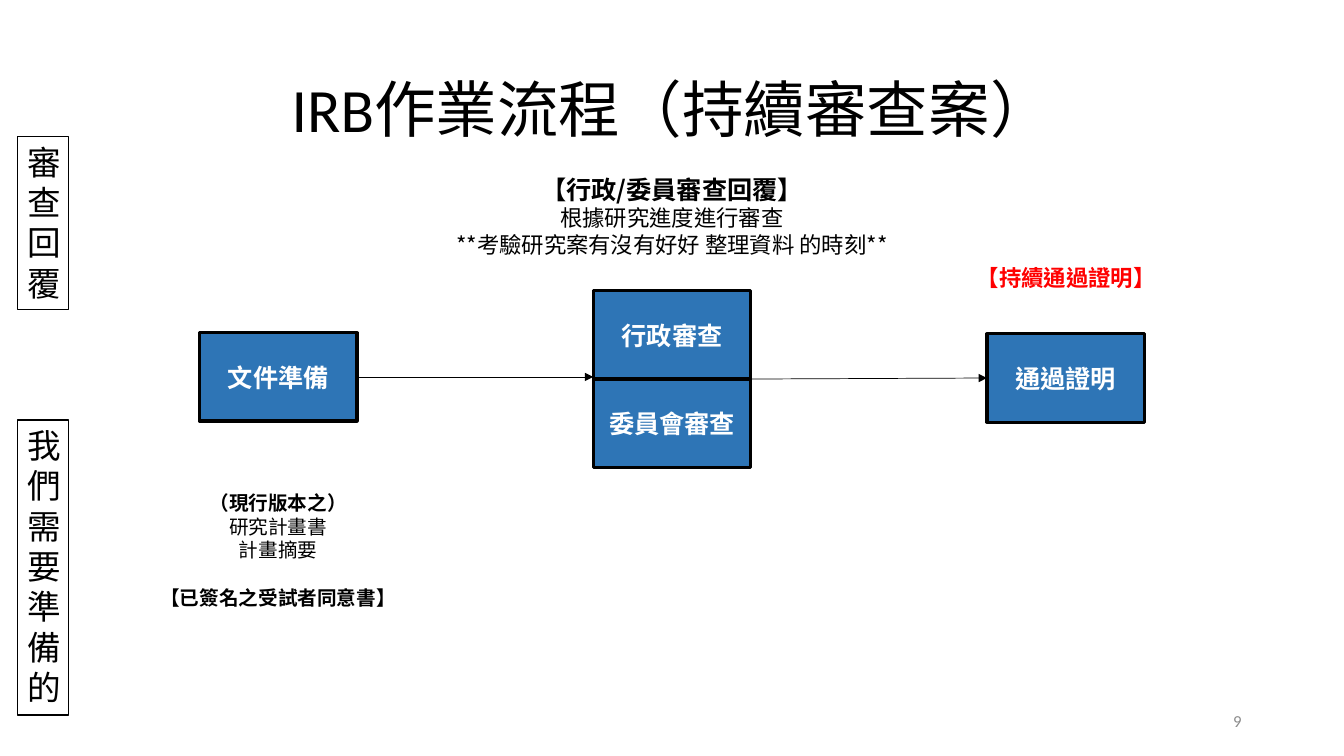
from lxml.etree import SubElement
from pptx import Presentation
from pptx.dml.color import RGBColor
from pptx.enum.shapes import MSO_CONNECTOR as Connector, MSO_SHAPE as Shape
from pptx.enum.text import MSO_ANCHOR as Anchor, MSO_AUTO_SIZE as AutoSize, PP_ALIGN as Align
from pptx.oxml.ns import qn
from pptx.util import Pt

PX = 9525  # EMU in one px, 96 px to the inch
COLORS = {"black": "000000", "white": "FFFFFF", "blue": "2E75B6",
          "red": "FF0000", "gray": "8C8C8C"}
CJK_FONT, LATIN_FONT = "Noto Sans CJK SC", "Calibri"


def color(name):
    return RGBColor.from_string(COLORS[name])


def set_all(target, values):
    for name, value in values.items():
        setattr(target, name, value)


class FlowSlide:
    """Holds the text style and the slide being built."""

    def __init__(self, presentation):
        self.slide = presentation.slides.add_slide(presentation.slide_layouts[5])
        self.shapes = self.slide.shapes

    def fill_text(self, shape, lines, align=Align.CENTER, anchor=Anchor.TOP,
                  font=CJK_FONT, spacing=None):
        """Each line is (text, size, bold, color, space before)."""
        frame = shape.text_frame
        set_all(frame, {"word_wrap": True, "auto_size": AutoSize.NONE,
                        "vertical_anchor": anchor})
        for index, (text, size, bold, tint, before) in enumerate(lines):
            paragraph = frame.add_paragraph() if index else frame.paragraphs[0]
            set_all(paragraph, {"alignment": align, "space_before": Pt(before),
                                "line_spacing": spacing or Pt(size * 1.2)})
            run = paragraph.add_run()
            run.text = text
            set_all(run.font, {"name": font, "size": Pt(size), "bold": bold})
            run.font.color.rgb = color(tint)
            properties = run._r.get_or_add_rPr()
            properties.set("lang", "zh-TW")
            SubElement(properties, qn("a:ea"), typeface=CJK_FONT)

    def title(self, text, left, top, width, height):
        shape = self.shapes.title
        set_all(shape, {"left": left * PX, "top": top * PX,
                        "width": width * PX, "height": height * PX})
        self.fill_text(shape, [(text, 44, False, "black", 0)], anchor=Anchor.MIDDLE,
                       font=LATIN_FONT, spacing=0.9)

    def text(self, lines, left, top, width, height, **style):
        box = self.shapes.add_textbox(left * PX, top * PX, width * PX, height * PX)
        self.fill_text(box, lines, **style)

    def box(self, lines, left, top, width, height, fill=None, line=0.75, **style):
        shape = self.shapes.add_shape(Shape.RECTANGLE, left * PX, top * PX,
                                      width * PX, height * PX)
        shape.shadow.inherit = False
        if fill:
            shape.fill.solid()
            shape.fill.fore_color.rgb = color(fill)
        else:
            shape.fill.background()
        shape.line.color.rgb = color("black")
        shape.line.width = Pt(line)
        self.fill_text(shape, lines, **style)

    def arrow(self, left, top, right, bottom):
        connector = self.shapes.add_connector(Connector.STRAIGHT, left * PX, top * PX,
                                              right * PX, bottom * PX)
        connector.line.color.rgb = color("black")
        connector.line.width = Pt(0.5)
        properties = connector._element.spPr
        SubElement(properties.find(qn("a:ln")), qn("a:tailEnd"), type="triangle")
        SubElement(properties, qn("a:effectLst"))


def main():
    presentation = Presentation()
    set_all(presentation, {"slide_width": 1280 * PX, "slide_height": 720 * PX})
    flow = FlowSlide(presentation)
    flow.title("IRB作業流程（持續審查案）", 88, 38, 1104, 139)

    # Steps in three evenly spaced columns
    width, height = 150, 84
    first, second, third = range(190, 941, 375)
    middle = 361
    for label, left, top in [("委員會審查", second, middle),
                             ("行政審查", second, middle - height),
                             ("文件準備", first, 317),
                             ("通過證明", third, 318)]:
        flow.box([(label, 18, True, "white", 0)], left, top, width, height,
                 fill="blue", line=2.25, anchor=Anchor.MIDDLE)

    # Row labels, one character a line
    for label, top, label_height in [("我們需要準備的", 400, 281), ("審查回覆", 130, 165)]:
        flow.box([(character, 24, False, "black", 0) for character in label],
                 17, top, 48, label_height)

    # Notes above and below the steps
    flow.text([("（現行版本之）", 14, True, "black", 0),
               ("研究計畫書", 14, False, "black", 0),
               ("計畫摘要", 14, False, "black", 0),
               ("【已簽名之受試者同意書】", 14, True, "black", 17)],
              141, 463, 248, 191)
    flow.text([("【持續通過證明】", 16, True, "red", 0)], 914, 247, 203, 59)
    flow.text([("【行政/委員審查回覆】", 18, True, "black", 0),
               ("根據研究進度進行審查", 16, False, "black", 0),
               ("**考驗研究案有沒有好好 整理資料 的時刻**", 16, False, "black", 0)],
              320, 161, 640, 90)

    # Arrows between the steps
    flow.arrow(first + width, 359, second, 359)
    flow.arrow(second + width, middle, third, 360)

    # Page number
    flow.text([("9", 12, False, "gray", 0)], 904, 667, 288, 38,
              align=Align.RIGHT, anchor=Anchor.MIDDLE, font=LATIN_FONT)

    presentation.save("out.pptx")


if __name__ == "__main__":
    main()
